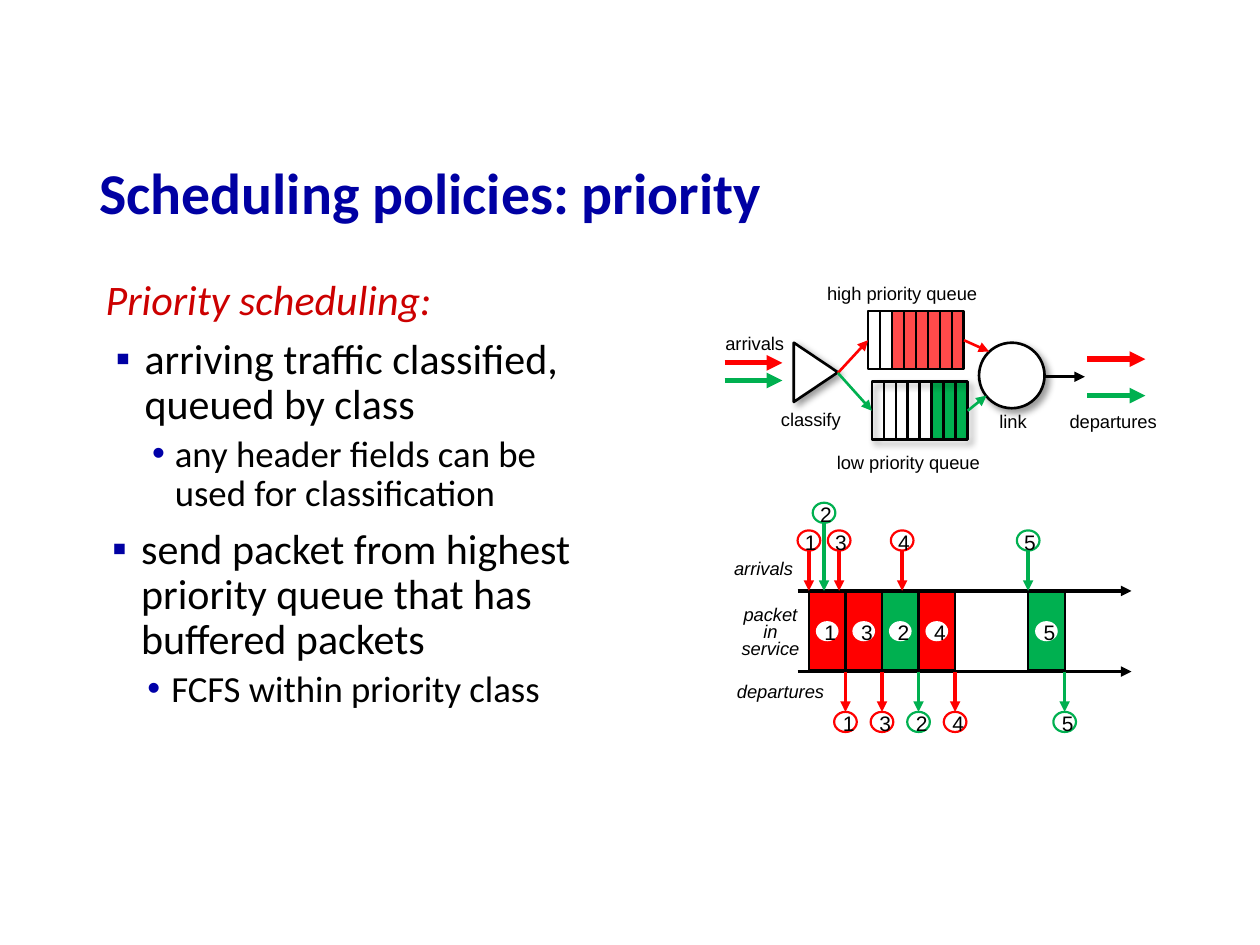
from dataclasses import dataclass
from typing import NamedTuple, Optional

from lxml.etree import SubElement
from pptx import Presentation
from pptx.dml.color import RGBColor
from pptx.enum.shapes import MSO_CONNECTOR, MSO_SHAPE
from pptx.enum.text import MSO_ANCHOR, MSO_AUTO_SIZE, PP_ALIGN
from pptx.oxml.ns import qn
from pptx.util import Inches, Pt


@dataclass(frozen=True)
class Theme:
    navy: str = "0000A3"
    dot: str = "0000A8"
    crimson: str = "CC0000"
    red: str = "FF0000"
    green: str = "00B050"
    black: str = "000000"
    white: str = "FFFFFF"
    head: str = "Calibri"
    plain: str = "Arial"
    title: float = 33
    body: float = 24
    sub: float = 21
    label: float = 10.5
    digit: float = 12
    thin: float = 1.25
    mid: float = 1.5
    axis: float = 2
    thick: float = 3


class Item(NamedTuple):
    text: str
    left: float
    hang: float
    size: float
    before: float
    color: str = "000000"
    bullet: str = ""
    mark: str = ""
    italic: bool = False


class Label(NamedTuple):
    text: str
    x: float
    y: float
    w: float
    italic: bool = False


class Packet(NamedTuple):
    name: str
    color: str
    slot: int
    come: float  # centre of the arrival arrow
    top: float = 4.21


class Queue(NamedTuple):
    x: float
    y: float
    color: str
    first: int  # filled cells
    last: int
    alpha: Optional[int] = None
    shade: bool = False


T = Theme()
CELL, QH = 0.095, 0.46
SLOT, START, UPPER, LOWER = 0.29, 6.42, 4.69, 5.33
RING_W, RING_H = 0.18, 0.16

prs = Presentation()
prs.slide_width, prs.slide_height = Inches(10), Inches(7.5)
slide = prs.slides.add_slide(prs.slide_layouts[5])
shapes = slide.shapes


def style(run, size: float, face: str, color: str, **more) -> None:
    for key, value in {"size": Pt(size), "name": face, **more}.items():
        setattr(run.font, key, value)
    run.font.color.rgb = RGBColor.from_string(color)


def draw(kind, x: float, y: float, w: float, h: float, fill: Optional[str] = None,
         line: Optional[str] = None, width: float = T.mid, shade: bool = False,
         alpha: Optional[int] = None):
    shape = shapes.add_shape(kind, Inches(x), Inches(y), Inches(w), Inches(h))
    shape.shadow.inherit = False
    if fill:
        shape.fill.solid()
        shape.fill.fore_color.rgb = RGBColor.from_string(fill)
    else:
        shape.fill.background()
    if line:
        shape.line.color.rgb = RGBColor.from_string(line)
        shape.line.width = Pt(width)
    else:
        shape.line.fill.background()
    props = shape._element.spPr
    if alpha:
        tint = props.find(f"{qn('a:solidFill')}/{qn('a:srgbClr')}")
        SubElement(tint, qn("a:alpha"), val=str(alpha * 1000))
    if shade:
        cast = SubElement(props.find(qn("a:effectLst")), qn("a:outerShdw"),
                          blurRad=str(Pt(4)), dist=str(Pt(3)), dir="2700000",
                          algn="tl", rotWithShape="0")
        tint = SubElement(cast, qn("a:srgbClr"), val=T.black)
        SubElement(tint, qn("a:alpha"), val="40000")
    return shape


def link(x1: float, y1: float, x2: float, y2: float, color: str,
         width: float = T.mid, arrow: bool = True):
    line = shapes.add_connector(MSO_CONNECTOR.STRAIGHT, Inches(x1), Inches(y1),
                                Inches(x2), Inches(y2))
    line.line.color.rgb = RGBColor.from_string(color)
    line.line.width = Pt(width)
    props = line._element.spPr
    if arrow:
        SubElement(props.find(qn("a:ln")), qn("a:tailEnd"), type="triangle")
    SubElement(props, qn("a:effectLst"))
    return line


def write(text: str, x: float, y: float, w: float, h: float = 0.28,
          size: float = T.label, align=PP_ALIGN.CENTER, italic: bool = False,
          wrap: bool = False, pitch: Optional[float] = None) -> None:
    frame = shapes.add_textbox(Inches(x), Inches(y), Inches(w), Inches(h)).text_frame
    frame.word_wrap = wrap
    frame.auto_size = MSO_AUTO_SIZE.SHAPE_TO_FIT_TEXT
    para = frame.paragraphs[0]
    para.alignment = align
    if pitch:
        para.line_spacing = Pt(pitch)
    run = para.add_run()
    run.text = text
    style(run, size, T.plain, T.black, italic=italic)


def outline(items: list[Item], y: float, h: float, side: float, edge: float) -> None:
    frame = shapes.add_textbox(Inches(0.63), Inches(y), Inches(4.17), Inches(h)).text_frame
    frame.word_wrap = True
    frame.margin_left = frame.margin_right = Inches(side)
    frame.margin_top = frame.margin_bottom = Inches(edge)
    for i, item in enumerate(items):
        para = frame.add_paragraph() if i else frame.paragraphs[0]
        para.level = int(item.size == T.sub)
        para.line_spacing, para.space_before = 0.9, Pt(item.before)
        props = para._p.get_or_add_pPr()
        props.set("marL", str(Inches(item.left)))
        props.set("indent", str(Inches(-item.hang)))
        if item.bullet:
            SubElement(SubElement(props, qn("a:buClr")), qn("a:srgbClr"), val=item.mark)
            SubElement(props, qn("a:buFont"), typeface=T.plain)
            SubElement(props, qn("a:buChar"), char=item.bullet)
        run = para.add_run()
        run.text = item.text
        style(run, item.size, T.head, item.color, italic=item.italic)


def queue(q: Queue):
    draw(MSO_SHAPE.RECTANGLE, q.x + q.first * CELL, q.y, (q.last - q.first) * CELL, QH,
         q.color, alpha=q.alpha)
    box = draw(MSO_SHAPE.RECTANGLE, q.x, q.y, 8 * CELL, QH, line=T.black, shade=q.shade)
    for i in range(1, 8):
        x = q.x + i * CELL
        link(x, q.y, x, q.y + QH, T.black, arrow=False)
    return box


def badge(name: str, mid: float, top: float, line: Optional[str] = None,
          shift: float = -0.13) -> None:
    draw(MSO_SHAPE.OVAL, mid - RING_W / 2, top, RING_W, RING_H, T.white, line, T.thin)
    write(name, mid + shift, top - 0.06, 0.29, 0.3, T.digit, PP_ALIGN.LEFT)


def packet(p: Packet) -> None:
    left = START + p.slot * SLOT
    draw(MSO_SHAPE.RECTANGLE, left, 4.7, SLOT, 0.62, p.color, T.black, T.thin)
    badge(p.name, left + SLOT / 2, 4.93, shift=-0.12)
    badge(p.name, p.come, p.top, p.color)
    link(p.come, p.top + RING_H, p.come, UPPER, p.color, T.axis)
    leave = left + SLOT
    badge(p.name, leave, 5.65, p.color, -0.12)
    link(leave, LOWER, leave, 5.65, p.color, T.axis)


# Title
title = shapes.title
for key, value in {"left": 0.69, "top": 1.19, "width": 8.62, "height": 0.73}.items():
    setattr(title, key, Inches(value))
title.text_frame.text = "Scheduling policies: priority"
title.text_frame.auto_size = MSO_AUTO_SIZE.NONE
title.text_frame.vertical_anchor = MSO_ANCHOR.MIDDLE
para = title.text_frame.paragraphs[0]
para.alignment, para.line_spacing = PP_ALIGN.LEFT, 0.9
style(para.runs[0], T.title, T.head, T.navy, bold=True)

# Bulleted text
outline([
    Item("Priority scheduling:", 0.29, 0.18, T.body, 7.5, T.crimson, italic=True),
    Item("arriving traffic classified, queued by class", 0.42, 0.23, T.body, 7.5,
         bullet="▪", mark=T.navy),
    Item("any header fields can be used for classification", 0.66, 0.18, T.sub, 3.8,
         bullet="•", mark=T.dot),
], 2.17, 2.2, 0.1, 0.05)
outline([
    Item("send packet from highest priority queue that has buffered packets", 0.42, 0.23,
         T.body, 7.5, bullet="▪", mark=T.navy),
    Item("FCFS within priority class", 0.66, 0.19, T.sub, 3.8, bullet="•", mark=T.dot),
], 4.15, 1.61, 0.07, 0.04)

# Queues, classifier and link
low = queue(Queue(6.92, 3.03, T.green, 5, 8, shade=True))
high = queue(Queue(6.89, 2.47, T.red, 2, 8, alpha=71))
sorter = draw(MSO_SHAPE.ISOSCELES_TRIANGLE, 6.24, 2.78, 0.47, 0.35, T.white, T.black,
              shade=True)
sorter.rotation = 90
draw(MSO_SHAPE.OVAL, 7.77, 2.72, 0.52, 0.52, T.white, T.black, shade=True)
for box, color, y, x2, y2 in [(high, T.red, 2.7, 7.85, 2.79),
                              (low, T.green, 3.26, 7.83, 3.14)]:
    link(6.65, 2.96, 6.9, y, color).end_connect(box, 1)
    link(7.67, y, x2, y2, color).begin_connect(box, 3)
link(8.29, 2.99, 8.61, 2.99, T.black)

# Traffic in and out
for x, y, color in [(5.75, 2.88, T.red), (5.75, 3.02, T.green),
                    (8.63, 2.85, T.red), (8.63, 3.14, T.green)]:
    link(x, y, x + 0.46, y, color, T.thick)

# Time lines and packets
for y in (UPPER, LOWER):
    link(6.33, y, 8.98, y, T.black, T.axis)
for p in [Packet("1", T.red, 0, 6.42), Packet("3", T.red, 1, 6.66),
          Packet("2", T.green, 2, 6.54, 3.99), Packet("4", T.red, 3, 7.16),
          Packet("5", T.green, 6, 8.16)]:
    packet(p)

# Labels
for tag in [Label("high priority queue", 6.45, 2.19, 1.42),
            Label("low priority queue", 6.53, 3.53, 1.36),
            Label("arrivals", 5.65, 2.59, 0.68), Label("classify", 6.09, 3.19, 0.69),
            Label("departures", 8.38, 3.21, 0.91), Label("link", 7.83, 3.21, 0.42),
            Label("arrivals", 5.72, 4.37, 0.68, True),
            Label("departures", 5.74, 5.35, 0.91, True)]:
    write(tag.text, tag.x, tag.y, tag.w, italic=tag.italic)
write("packet in service", 5.76, 4.78, 0.71, 0.52, italic=True, wrap=True, pitch=9.6)

prs.save("out.pptx")
